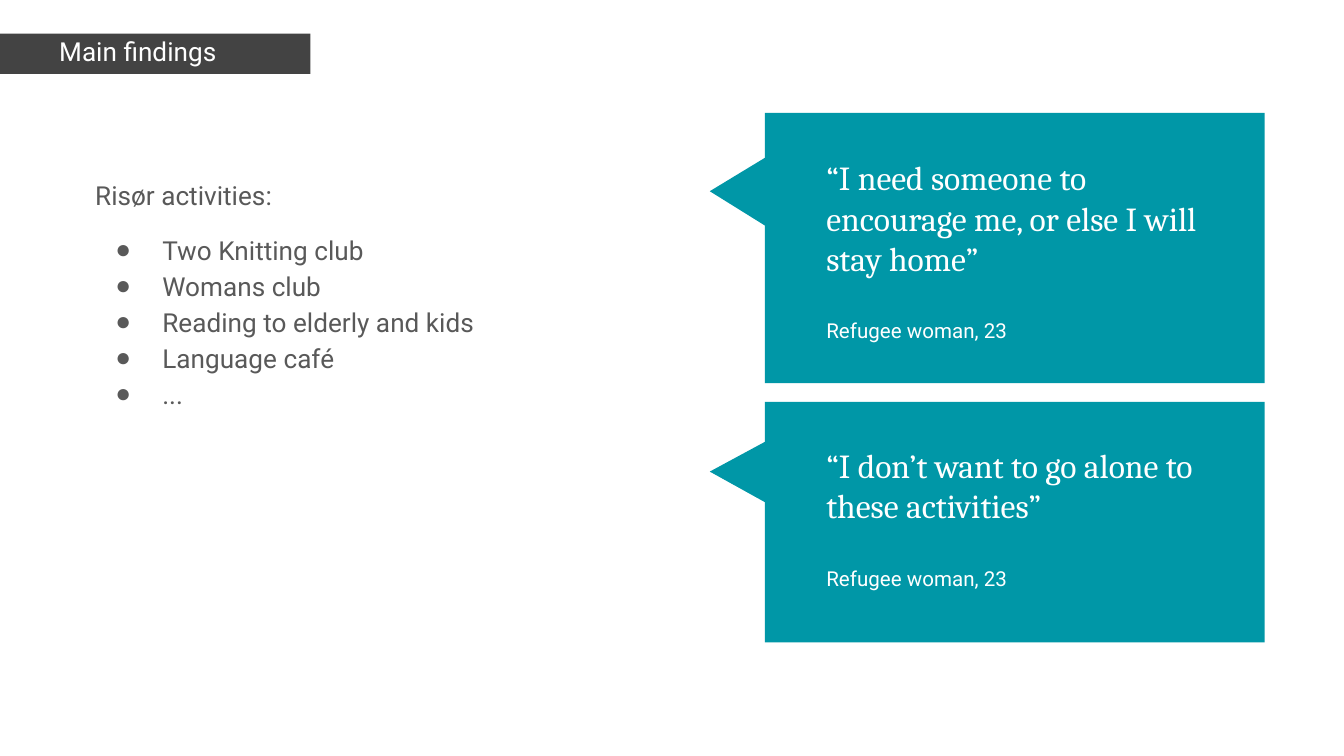
"""Build the main findings slide: Risør activities beside two quotes."""
from dataclasses import dataclass

from lxml import etree
from pptx import Presentation, util as u
from pptx.dml.color import RGBColor
from pptx.enum import shapes, text
from pptx.oxml.ns import qn


@dataclass(frozen=True)
class Theme:
    teal: str = "0097A7"
    dark: str = "434343"
    gray: str = "595959"
    white: str = "FFFFFF"
    sans: str = "Roboto"
    serif: str = "Cambria"
    bullet: str = "Arial"
    quote_size: int = 18
    body_size: int = 14
    source_size: int = 11


theme = Theme()


def add_panel(page, preset, place, color):
    panel = page.shapes.add_shape(preset, *map(u.Inches, place))
    panel.shadow.inherit = False
    panel.fill.solid()
    panel.fill.fore_color.rgb = RGBColor.from_string(color)
    panel.line.fill.background()
    return panel


def add_span(para, wording, size, font, color):
    span = para.add_run()
    span.text = wording
    span.font.size = u.Pt(size)
    span.font.name = font
    span.font.color.rgb = RGBColor.from_string(color)


deck = Presentation()
deck.slide_width = u.Inches(10)
deck.slide_height = deck.slide_width * 9 // 16
page = deck.slides.add_slide(deck.slide_layouts[5])
title = page.shapes.title

quotes = [
    ("“I need someone to encourage me, or else I will stay home”", 0.84, 2.01, 1.07),
    ("“I don’t want to go alone to these activities”", 2.99, 1.79, 3.21),
]
frames = []
for quote, top, height, text_top in quotes:
    callout = add_panel(page, shapes.MSO_SHAPE.RECTANGULAR_CALLOUT,
                        (5.69, top, 3.72, height), theme.teal)
    callout.adjustments[0], callout.adjustments[1] = -0.61, -0.21
    box = page.shapes.add_textbox(u.Inches(6.05), u.Inches(text_top),
                                  u.Inches(3.11), u.Inches(1.57))
    frames.append(box.text_frame)
    add_span(box.text_frame.paragraphs[0], quote, theme.quote_size, theme.serif, theme.white)
    para = box.text_frame.add_paragraph()
    para.space_before = u.Pt(21.5)
    add_span(para, "Refugee woman, 23", theme.source_size, theme.sans, theme.white)

band = add_panel(page, shapes.MSO_SHAPE.RECTANGLE, (-0.32, 0.25, 2.63, 0.3), theme.dark)
band.element.addnext(title.element)
title.left, title.top = u.Inches(0.34), u.Inches(0.16)
title.width, title.height = u.Inches(1.97), u.Inches(0.3)
frames.append(title.text_frame)
title.text_frame.auto_size = text.MSO_AUTO_SIZE.NONE
para = title.text_frame.paragraphs[0]
para.alignment = text.PP_ALIGN.LEFT
add_span(para, "Main findings", theme.body_size, theme.sans, theme.white)

box = page.shapes.add_textbox(u.Inches(0.61), u.Inches(1.2), u.Inches(3.24), u.Inches(1.86))
frames.append(box.text_frame)
para = box.text_frame.paragraphs[0]
para.line_spacing = 1.15
para.space_after = u.Pt(10)
add_span(para, "Risør activities:", theme.body_size, theme.sans, theme.gray)

activities = ["Two Knitting club", "Womans club", "Reading to elderly and kids",
              "Language café", "..."]
for activity in activities:
    para = box.text_frame.add_paragraph()
    para.line_spacing = 1.15
    add_span(para, activity, theme.body_size, theme.sans, theme.gray)
    props = para._p.get_or_add_pPr()
    props.set("marL", str(u.Inches(0.5)))
    props.set("indent", str(u.Inches(-0.35)))
    color = etree.SubElement(props, qn("a:buClr"))
    etree.SubElement(color, qn("a:srgbClr"), val=theme.gray)
    etree.SubElement(props, qn("a:buFont"), typeface=theme.bullet)
    etree.SubElement(props, qn("a:buChar"), char="●")

for frame in frames:
    frame.word_wrap = True
    frame.vertical_anchor = text.MSO_ANCHOR.TOP
    frame.margin_left = frame.margin_right = u.Inches(0.1)
    frame.margin_top = frame.margin_bottom = u.Inches(0.1)

deck.save("out.pptx")
